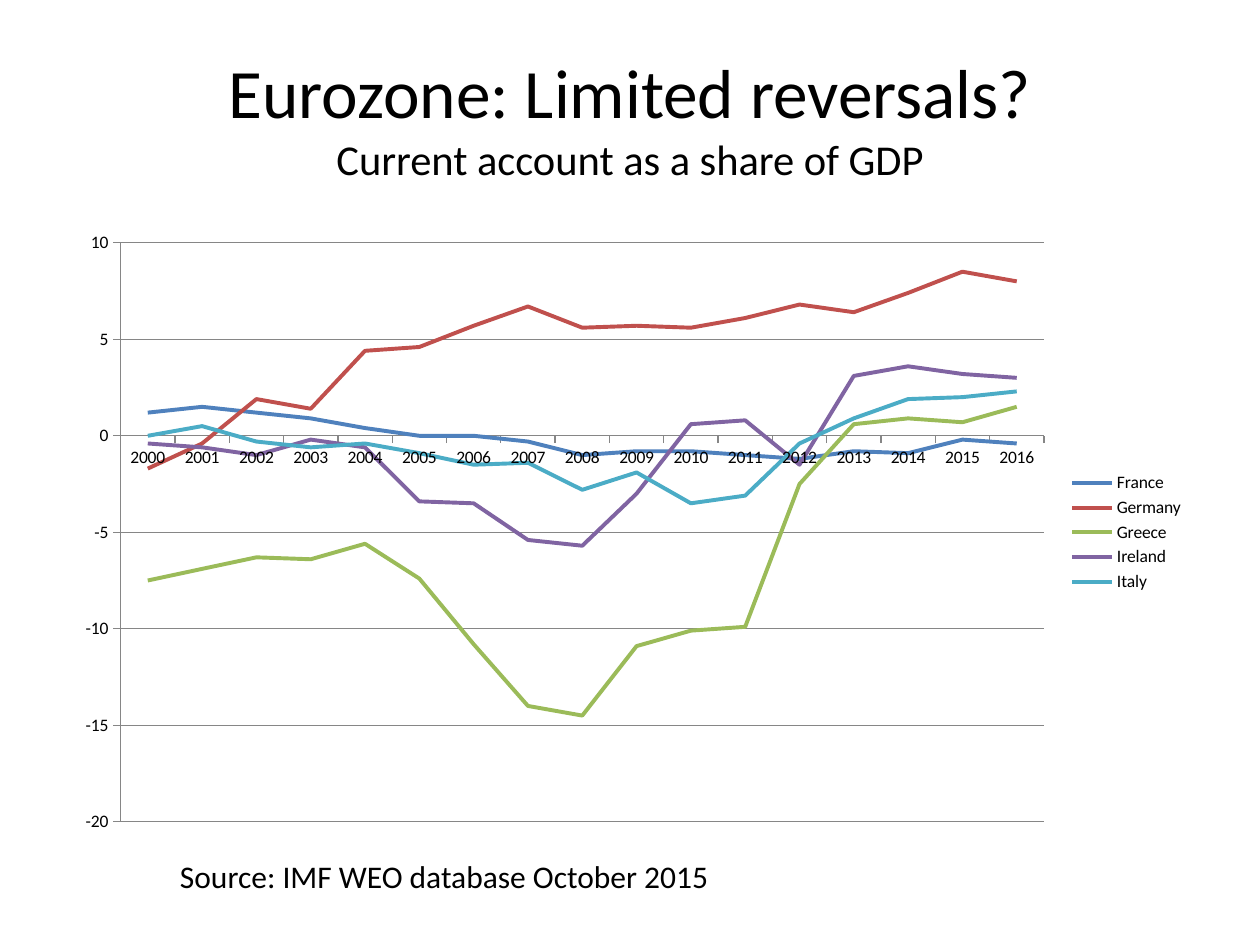
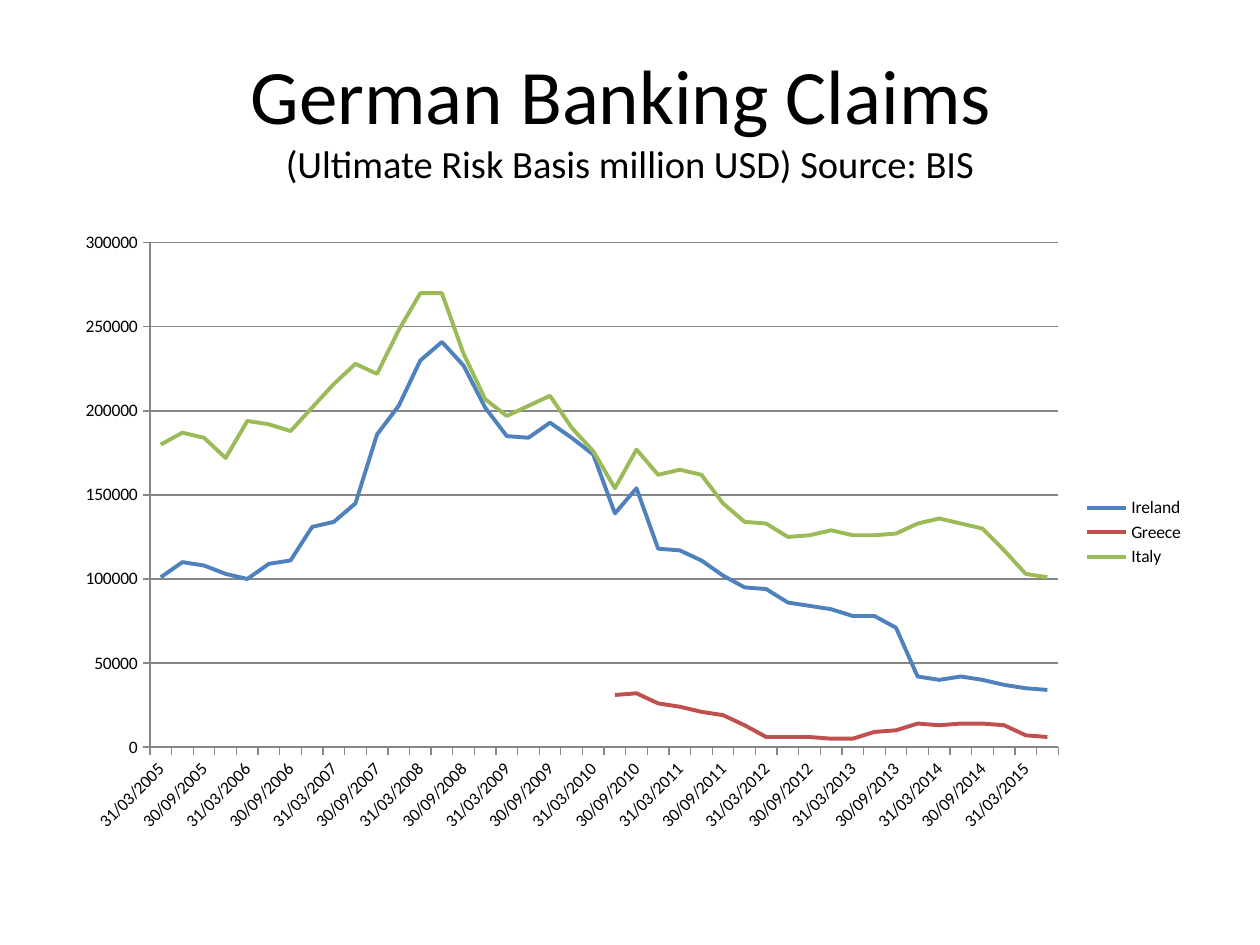
from pptx import Presentation
from pptx.chart.data import CategoryChartData
from pptx.dml.color import RGBColor
from pptx.enum.chart import XL_CHART_TYPE, XL_LEGEND_POSITION, XL_MARKER_STYLE, XL_TICK_MARK
from pptx.enum.text import MSO_ANCHOR, MSO_AUTO_SIZE, PP_ALIGN
from pptx.util import Inches, Pt

FONT = "Calibri"
BLACK = RGBColor(0x00, 0x00, 0x00)
GREY = RGBColor(0x86, 0x86, 0x86)
BLUE = RGBColor(0x4F, 0x81, 0xBD)
RED = RGBColor(0xC0, 0x50, 0x4D)
GREEN = RGBColor(0x9B, 0xBB, 0x59)
PURPLE = RGBColor(0x80, 0x64, 0xA2)
TEAL = RGBColor(0x4B, 0xAC, 0xC6)
LINE_COLOURS = [BLUE, RED, GREEN, PURPLE, TEAL]

YEARS = [str(year) for year in range(2000, 2017)]
CURRENT_ACCOUNTS = {
    "France": [1.2, 1.5, 1.2, 0.9, 0.4, 0, 0, -0.3, -1, -0.8, -0.8, -1, -1.2,
               -0.8, -0.9, -0.2, -0.4],
    "Germany": [-1.7, -0.4, 1.9, 1.4, 4.4, 4.6, 5.7, 6.7, 5.6, 5.7, 5.6, 6.1,
                6.8, 6.4, 7.4, 8.5, 8],
    "Greece": [-7.5, -6.9, -6.3, -6.4, -5.6, -7.4, -10.8, -14, -14.5, -10.9,
               -10.1, -9.9, -2.5, 0.6, 0.9, 0.7, 1.5],
    "Ireland": [-0.4, -0.6, -1, -0.2, -0.6, -3.4, -3.5, -5.4, -5.7, -3, 0.6,
                0.8, -1.5, 3.1, 3.6, 3.2, 3],
    "Italy": [0, 0.5, -0.3, -0.6, -0.4, -0.9, -1.5, -1.4, -2.8, -1.9, -3.5,
              -3.1, -0.4, 0.9, 1.9, 2, 2.3],
}

QUARTER_ENDS = [f"{day_month}/{year}" for year in range(2005, 2016)
                for day_month in ("31/03", "30/06", "30/09", "31/12")][:42]
CLAIMS_IN_BILLIONS = {
    "Ireland": [101, 110, 108, 103, 100, 109, 111, 131, 134, 145, 186, 203, 230,
                241, 227, 202, 185, 184, 193, 184, 174, 139, 154, 118, 117, 111,
                102, 95, 94, 86, 84, 82, 78, 78, 71, 42, 40, 42, 40, 37, 35, 34],
    "Greece": [None] * 21 + [31, 32, 26, 24, 21, 19, 13, 6, 6, 6, 5, 5, 9, 10,
                             14, 13, 14, 14, 13, 7, 6],
    "Italy": [180, 187, 184, 172, 194, 192, 188, 202, 216, 228, 222, 248, 270,
              270, 234, 207, 197, 203, 209, 190, 176, 154, 177, 162, 165, 162,
              145, 134, 133, 125, 126, 129, 126, 126, 127, 133, 136, 133, 130,
              117, 103, 101],
}


def style_font(font, size):
    """Apply the shared typeface and colour at the given point size."""
    font.name = FONT
    font.size = Pt(size)
    font.color.rgb = BLACK


def add_titled_slide(prs, heading, subtitle, heading_size, subtitle_size):
    """Add a slide whose title holds a heading above a smaller subtitle."""
    slide = prs.slides.add_slide(prs.slide_layouts[5])
    title = slide.shapes.title
    title.left, title.top = Inches(0.5), Inches(0.3)
    title.width, title.height = Inches(9), Inches(1.25)
    frame = title.text_frame
    frame.auto_size = MSO_AUTO_SIZE.NONE
    frame.vertical_anchor = MSO_ANCHOR.MIDDLE
    lines = frame.paragraphs[0]
    lines.text = f"{heading}\v{subtitle}"
    lines.alignment = PP_ALIGN.CENTER
    for run, size in zip(lines.runs, (heading_size, subtitle_size)):
        style_font(run.font, size)
    return slide


def style_line(line, colour, width):
    """Colour a line and set its width in points."""
    line.color.rgb = colour
    line.width = Pt(width)


def add_line_chart(slide, categories, countries, lowest, highest, step):
    """Add a line chart with one line per country and a legend on the right."""
    chart_data = CategoryChartData()
    chart_data.categories = categories
    for country, values in countries.items():
        chart_data.add_series(country, values)
    chart = slide.shapes.add_chart(
        XL_CHART_TYPE.LINE, Inches(0.5), Inches(1.75), Inches(9), Inches(4.95),
        chart_data).chart
    style_font(chart.font, 10)
    chart.has_title = False
    chart.has_legend = True
    chart.legend.position = XL_LEGEND_POSITION.RIGHT
    chart.legend.include_in_layout = False

    for axis in (chart.category_axis, chart.value_axis):
        axis.major_tick_mark = XL_TICK_MARK.OUTSIDE
        axis.minor_tick_mark = XL_TICK_MARK.NONE
        style_line(axis.format.line, GREY, 0.75)
    scale = chart.value_axis
    scale.minimum_scale, scale.maximum_scale = lowest, highest
    scale.major_unit = step
    scale.has_major_gridlines = True
    style_line(scale.major_gridlines.format.line, GREY, 0.75)

    chart.plots[0].vary_by_categories = False
    for country_line, colour in zip(chart.plots[0].series, LINE_COLOURS):
        country_line.smooth = False
        country_line.marker.style = XL_MARKER_STYLE.NONE
        style_line(country_line.format.line, colour, 2.25)


def add_source_note(slide, note):
    """Add the data source below the chart."""
    frame = slide.shapes.add_textbox(
        Inches(1.33), Inches(6.75), Inches(4.58), Inches(0.4)).text_frame
    frame.word_wrap = True
    frame.auto_size = MSO_AUTO_SIZE.SHAPE_TO_FIT_TEXT
    frame.text = note
    style_font(frame.paragraphs[0].runs[0].font, 18)


def main():
    """Build and save the two slides."""
    prs = Presentation()
    prs.slide_width, prs.slide_height = Inches(10), Inches(7.5)

    reversals = add_titled_slide(prs, "Eurozone: Limited reversals?",
                                 "Current account as a share of GDP", 39.6, 24.3)
    add_line_chart(reversals, YEARS, CURRENT_ACCOUNTS, -20, 10, 5)
    add_source_note(reversals, "Source: IMF WEO database October 2015")

    banking = add_titled_slide(prs, "German Banking Claims ",
                               "(Ultimate Risk Basis million USD) Source: BIS", 44, 22)
    claims = {country: [None if value is None else value * 1000 for value in values]
              for country, values in CLAIMS_IN_BILLIONS.items()}
    add_line_chart(banking, QUARTER_ENDS, claims, 0, 300000, 50000)

    prs.save("out.pptx")


if __name__ == "__main__":
    main()
